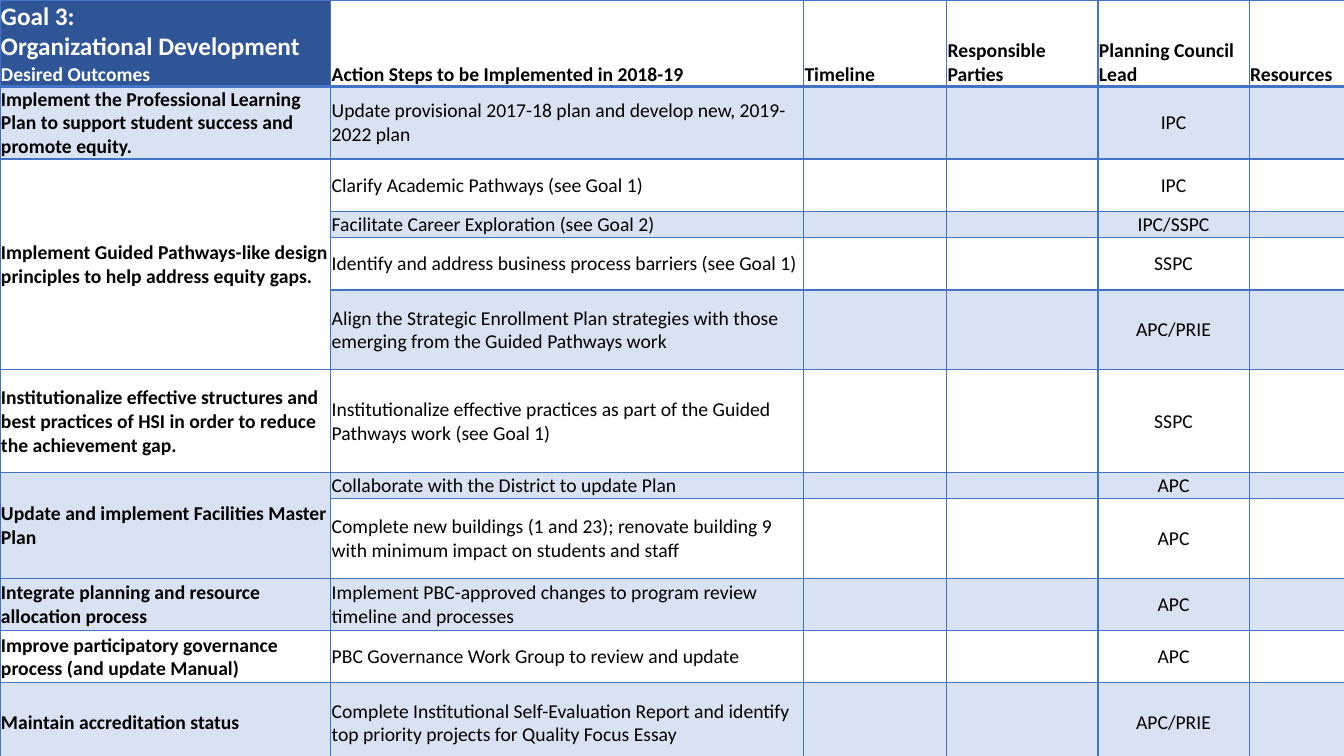
from lxml import etree
from pptx import Presentation
from pptx import util as u
from pptx.dml.color import RGBColor
from pptx.enum import text
from pptx.oxml.ns import qn

BLUE = RGBColor(0x44, 0x72, 0xC4)
NAVY = RGBColor(0x2F, 0x55, 0x97)
WHITE = RGBColor(0xFF, 0xFF, 0xFF)
BLACK = RGBColor(0, 0, 0)
BAND_ALPHA = "20000"

COLUMN_WIDTHS = [3.28, 4.69, 1.42, 1.5, 1.5, 0.95]
ROW_HEIGHTS = [0.69, 0.52, 0.52, 0.26, 0.52, 0.79, 1.02, 0.26, 0.79, 0.52, 0.52, 0.79]
HEADINGS = ["Goal 3:\nOrganizational Development\nDesired Outcomes",
            "Action Steps to be Implemented in 2018-19", "Timeline",
            "Responsible Parties", "Planning Council Lead", "Resources"]

# Each outcome with its action steps and the council that leads them
OUTCOMES = [
    ("Implement the Professional Learning Plan to support student success and promote equity.", [
        ("Update provisional 2017-18 plan and develop new, 2019-2022 plan", "IPC")]),
    ("Implement Guided Pathways-like design principles to help address equity gaps.", [
        ("Clarify Academic Pathways (see Goal 1)", "IPC"),
        ("Facilitate Career Exploration (see Goal 2)", "IPC/SSPC"),
        ("Identify and address business process barriers (see Goal 1)", "SSPC"),
        ("Align the Strategic Enrollment Plan strategies with those emerging from "
         "the Guided Pathways work", "APC/PRIE")]),
    ("Institutionalize effective structures and best practices of HSI in order to reduce "
     "the achievement gap.", [
        ("Institutionalize effective practices as part of the Guided Pathways work "
         "(see Goal 1)", "SSPC")]),
    ("Update and implement Facilities Master Plan", [
        ("Collaborate with the District to update Plan", "APC"),
        ("Complete new buildings (1 and 23); renovate building 9 with minimum impact on "
         "students and staff", "APC")]),
    ("Integrate planning and resource allocation process", [
        ("Implement PBC-approved changes to program review timeline and processes", "APC")]),
    ("Improve participatory governance process (and update Manual)", [
        ("PBC Governance Work Group to review and update", "APC")]),
    ("Maintain accreditation status", [
        ("Complete Institutional Self-Evaluation Report and identify top priority projects "
         "for Quality Focus Essay", "APC/PRIE")]),
]


def add_border(cell, side, points):
    line = etree.SubElement(cell._tc.get_or_add_tcPr(), qn(f"a:ln{side}"),
                            w=str(u.Pt(points)))
    fill = etree.SubElement(line, qn("a:solidFill"))
    etree.SubElement(fill, qn("a:srgbClr"), val=str(BLUE))


prs = Presentation()
prs.slide_width, prs.slide_height = u.Inches(13.33), u.Inches(7.5)
slide = prs.slides.add_slide(prs.slide_layouts[6])

# Table grid
plan = slide.shapes.add_table(len(ROW_HEIGHTS), len(COLUMN_WIDTHS), 0, 0,
                              u.Inches(13.33), u.Inches(sum(ROW_HEIGHTS))).table
plan.first_row = plan.horz_banding = False
for column, width in zip(plan.columns, COLUMN_WIDTHS):
    column.width = u.Inches(width)
for row, height in zip(plan.rows, ROW_HEIGHTS):
    row.height = u.Inches(height)

# Wording and merged outcomes
for col, heading in enumerate(HEADINGS):
    plan.cell(0, col).text = heading
row = 1
for outcome, steps in OUTCOMES:
    plan.cell(row, 0).text = outcome
    if len(steps) > 1:
        plan.cell(row, 0).merge(plan.cell(row + len(steps) - 1, 0))
    for step, lead in steps:
        plan.cell(row, 1).text = step
        plan.cell(row, 4).text = lead
        row += 1

# Cell formats
for r in range(len(ROW_HEIGHTS)):
    for c in range(len(COLUMN_WIDTHS)):
        cell = plan.cell(r, c)
        header, goal = r == 0, r == c == 0
        layout = {
            "margin_left": u.Inches(0.01), "margin_right": u.Inches(0.01),
            "margin_top": u.Inches(0.01), "margin_bottom": 0,
            "vertical_anchor": text.MSO_ANCHOR.BOTTOM if header else text.MSO_ANCHOR.MIDDLE,
        }
        for name, value in layout.items():
            setattr(cell, name, value)

        # Borders, heavier under the headings
        for side, points in {"L": 1, "R": 1, "T": 2 if r == 1 else 1,
                             "B": 2 if header else 1}.items():
            add_border(cell, side, points)

        # Heading fill and tinted odd rows
        if goal:
            cell.fill.solid()
            cell.fill.fore_color.rgb = NAVY
        elif r % 2 and not cell.is_spanned:
            cell.fill.solid()
            cell.fill.fore_color.rgb = BLUE
            tint = cell._tc.tcPr.find(qn("a:solidFill")).find(qn("a:srgbClr"))
            etree.SubElement(tint, qn("a:alpha"), val=BAND_ALPHA)
        else:
            cell.fill.background()

        # Text; empty cells keep the small size so short rows stay short
        for i, para in enumerate(cell.text_frame.paragraphs):
            if c == 4 and not header:
                para.alignment = text.PP_ALIGN.CENTER
            if not para.runs:
                etree.SubElement(para._p, qn("a:endParaRPr"), sz="1400")
            for run in para.runs:
                run.font.name = "Calibri"
                run.font.size = u.Pt(18 if goal and i < 2 else 14)
                run.font.bold = header or c == 0
                run.font.color.rgb = WHITE if goal else BLACK

prs.save("out.pptx")
